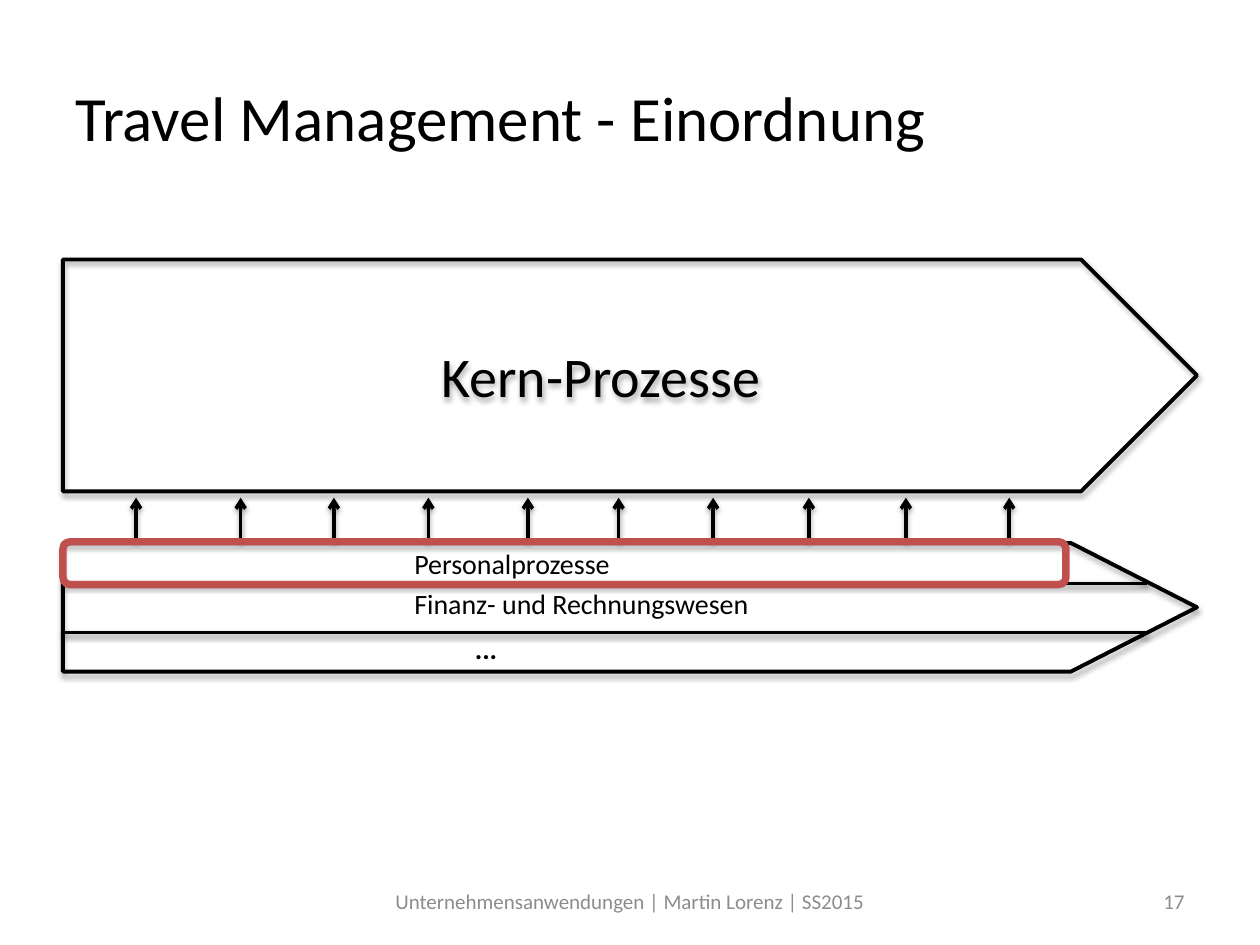
"""Build the slide that places travel management among the company processes."""
from lxml.etree import SubElement
from pptx import Presentation
from pptx.dml.color import RGBColor
from pptx.enum.shapes import MSO_CONNECTOR as CONN, MSO_SHAPE as SHAPE
from pptx.enum.text import MSO_ANCHOR as ANCHOR, MSO_AUTO_SIZE as FIT, PP_ALIGN as ALIGN
from pptx.oxml.ns import qn
from pptx.util import Inches, Pt

COLORS = {"ink": "000000", "mark": "C0504D", "footer": "8C8C8C"}
FONT = "Calibri"
TITLE = "Travel Management - Einordnung"
CORE = "Kern-Prozesse"
SUPPORT = [
    ("Personalprozesse", 3.19, 4.29, 1.77, False),
    ("Finanz- und Rechnungswesen", 3.19, 4.61, 2.89, False),
    ("...", 3.67, 4.96, 0.38, True),
]
FOOTER = [
    ("17", (7.17, 6.95, 2.33, 0.4), ALIGN.RIGHT),
    ("Unternehmensanwendungen | Martin Lorenz | SS2015", (0.75, 6.95, 8.5, 0.4), ALIGN.CENTER),
]
LEFT, WIDTH = 0.5, 9
ARROW_XS = [1.08, 1.91, 2.65, 3.4, 4.19, 4.91, 5.66, 6.42, 7.19, 8.01]
ARROW_FROM, ARROW_TO = 4.3, 3.95
DIVIDER_YS, DIVIDER_END = [4.63, 5.02], 9.1


def rgb(name):
    return RGBColor.from_string(COLORS[name])


def write(sp, text, size, color="ink", align=ALIGN.LEFT, bold=False):
    p = sp.text_frame.paragraphs[0]
    p.text, p.alignment = text, align
    p.font.name, p.font.size, p.font.bold = FONT, Pt(size), bold
    p.font.color.rgb = rgb(color)


def add_text(s, box, text, size, wrap=True, **style):
    sp = s.shapes.add_textbox(*map(Inches, box))
    tf = sp.text_frame
    tf.word_wrap = wrap
    tf.auto_size = FIT.NONE if wrap else FIT.SHAPE_TO_FIT_TEXT
    tf.vertical_anchor = ANCHOR.MIDDLE if wrap else ANCHOR.TOP
    write(sp, text, size, **style)


def cast_shadow(effects, alpha, distance):
    shadow = SubElement(effects, qn("a:outerShdw"), blurRad=str(Pt(3.1)),
                        dist=str(Pt(distance)), dir="5400000", rotWithShape="0")
    color = SubElement(shadow, qn("a:srgbClr"), val=COLORS["ink"])
    SubElement(color, qn("a:alpha"), val=str(alpha * 1000))


def add_outline(s, kind, box, color="ink", width=2.25, shadow=True):
    sp = s.shapes.add_shape(kind, *map(Inches, box))
    sp.fill.background()
    sp.line.color.rgb, sp.line.width = rgb(color), Pt(width)
    sp.shadow.inherit = False
    if shadow:
        cast_shadow(sp._element.spPr.find(qn("a:effectLst")), 35, 1.8)
    return sp


def add_line(s, x1, y1, x2, y2, arrow=False):
    line = s.shapes.add_connector(CONN.STRAIGHT, *map(Inches, (x1, y1, x2, y2)))
    line.line.color.rgb, line.line.width = rgb("ink"), Pt(2)
    sp_pr = line._element.spPr
    if arrow:
        SubElement(sp_pr.find(qn("a:ln")), qn("a:tailEnd"), type="arrow")
    cast_shadow(SubElement(sp_pr, qn("a:effectLst")), 38, 1.6)


def main():
    prs = Presentation()
    prs.slide_width, prs.slide_height = Inches(10), Inches(7.5)
    s = prs.slides.add_slide(prs.slide_layouts[6])

    add_text(s, (LEFT, 0.3, WIDTH, 1.25), TITLE, 36)
    core = add_outline(s, SHAPE.PENTAGON, (LEFT, 2.06, WIDTH, 1.84))
    core.text_frame.vertical_anchor = ANCHOR.MIDDLE
    write(core, CORE, 32, align=ALIGN.CENTER)
    for x in ARROW_XS:
        add_line(s, x, ARROW_FROM, x, ARROW_TO, arrow=True)

    support = add_outline(s, SHAPE.PENTAGON, (LEFT, 4.31, WIDTH, 1.02))
    support.adjustments[0] = 0.98
    for text, x, y, width, bold in SUPPORT:
        add_text(s, (x, y, width, 0.37), text, 16, wrap=False, bold=bold)
    for y in DIVIDER_YS:
        add_line(s, LEFT, y, DIVIDER_END, y)
    add_outline(s, SHAPE.ROUNDED_RECTANGLE, (LEFT, 4.3, 7.96, 0.34), "mark", 4.25, shadow=False)

    for text, box, align in FOOTER:
        add_text(s, box, text, 12, color="footer", align=align)
    prs.save("out.pptx")


if __name__ == "__main__":
    main()
